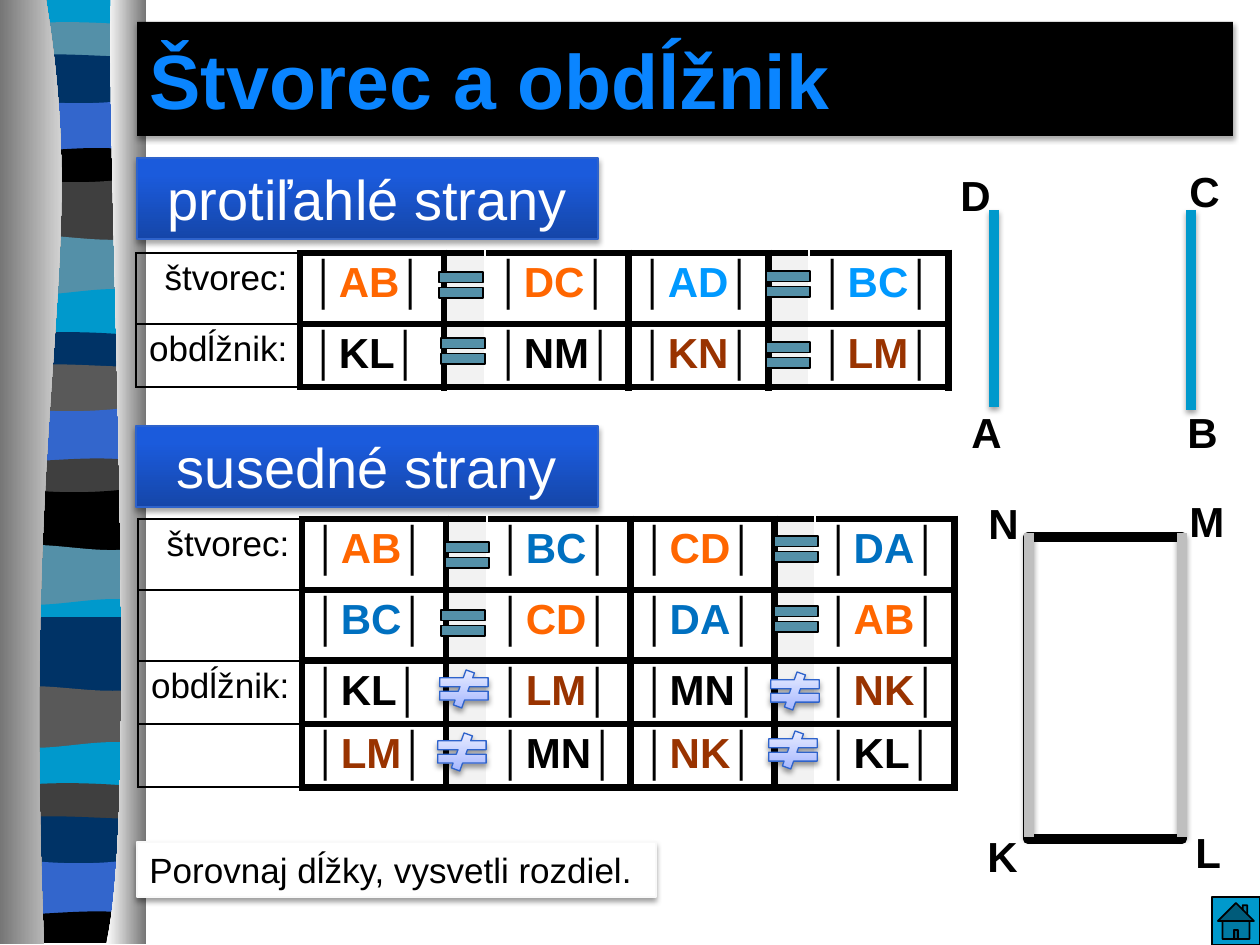
from lxml import etree
from pptx import Presentation, util as u
from pptx.dml.color import RGBColor
from pptx.enum import shapes, text
from pptx.oxml.ns import qn

SCALE = 914400 / 126
KIND = shapes.MSO_SHAPE
SIDE = text.PP_ALIGN
BLACK, WHITE, ORANGE, BROWN = "000000", "FFFFFF", "FF6600", "993300"
SKY, BLUE, TEAL, CYAN = "0099FF", "0070C0", "5490A8", "0099CC"
NAVY, ROYAL, DARK, GREY, PALE = "003366", "3366CC", "3F3F3F", "595959", "F2F2F2"
THICK, THIN = 4.5, 1


def px(*vals):
    """Turn px lengths into EMU."""
    return [round(v * SCALE) for v in vals]


def tint(code):
    """Make a colour from a hex string."""
    return RGBColor.from_string(code)


def put(item, form):
    """Set attributes of an object from a dict."""
    for name, val in form.items():
        setattr(item, name, val)


def write(para, runs, size, side=SIDE.LEFT):
    """Fill a paragraph with (text, colour, bold) runs."""
    para.alignment = side
    for words, code, bold in runs:
        run = para.add_run()
        run.text = words
        put(run.font, {"name": "Arial", "size": u.Pt(size), "bold": bold})
        run.font.color.rgb = tint(code)


def shade(item, alpha=0):
    """Replace the theme shadow by a soft one, or by none."""
    props = item._element.spPr
    for old in props.findall(qn("a:effectLst")):
        props.remove(old)
    effects = etree.SubElement(props, qn("a:effectLst"))
    if alpha:
        cast = etree.SubElement(effects, qn("a:outerShdw"), blurRad="39370",
                                dist="22860", dir="5400000", rotWithShape="0")
        color = etree.SubElement(cast, qn("a:srgbClr"), val=BLACK)
        etree.SubElement(color, qn("a:alpha"), val=str(alpha * 1000))


def paint(item, fill, line=None, width=1, alpha=0, angle=90):
    """Style a shape; a tuple of (position, colour) pairs is a gradient."""
    if isinstance(fill, str):
        item.fill.solid()
        item.fill.fore_color.rgb = tint(fill)
    else:
        item.fill.gradient()
        item.fill.gradient_angle = angle
        for stop, (place, code) in zip(item.fill.gradient_stops, fill):
            stop.position = place
            stop.color.rgb = tint(code)
    if line:
        item.line.color.rgb = tint(line)
        item.line.width = u.Pt(width)
    else:
        item.line.fill.background()
    shade(item, alpha)


def block(slide, kind, box, *style):
    """Add a styled preset shape."""
    item = slide.shapes.add_shape(kind, *px(*box))
    paint(item, *style)
    return item


def label(slide, words, left, top):
    """Add the letter of a corner."""
    frame = slide.shapes.add_textbox(*px(left, top, 46, 63)).text_frame
    frame.word_wrap = True
    write(frame.paragraphs[0], [(words, BLACK, True)], 24)


def rule(slide, left, top, end, code):
    """Add an upright side of a figure."""
    item = slide.shapes.add_connector(shapes.MSO_CONNECTOR.STRAIGHT, *px(left, top, left, end))
    item.line.color.rgb = tint(code)
    item.line.width = u.Pt(6)
    shade(item, 35)


def form(slide, points, fill):
    """Add a closed outline whose first four points make a curve."""
    pen = slide.shapes.build_freeform(*px(*points[0]), scale=1.0)
    pen.add_line_segments([px(*p) for p in points[1:]], close=True)
    item = pen.convert_to_shape()
    trace = next(item._element.iter(qn("a:path")))
    bend = etree.Element(qn("a:cubicBezTo"))
    for step in trace.findall(qn("a:lnTo"))[:3]:
        bend.append(step[0])
        trace.remove(step)
    trace.insert(1, bend)
    paint(item, fill, None, 1, 0, 0)


def pillar(slide):
    """Draw the wavy bands between two grey columns."""
    left, right, base = 6, 143, 943
    bands = [(0, 0, 0, CYAN), (26, -6, -4, TEAL), (57, -6, 0, NAVY), (98, 6, 8, ROYAL),
             (152, 0, -9, BLACK), (177, 7, 7, DARK), (237, -7, 9, TEAL), (292, 10, -10, CYAN),
             (336, -6, -4, NAVY), (367, -6, 0, GREY), (406, 8, 6, ROYAL), (462, 0, -8, DARK),
             (487, 7, 7, BLACK), (547, -8, 10, TEAL), (602, 10, -10, CYAN), (617, 0, 0, NAVY),
             (688, -7, 9, GREY), (745, 10, -10, CYAN), (787, -6, -4, DARK), (819, -6, 0, NAVY),
             (858, 6, 8, ROYAL), (915, 0, -8, BLACK)]
    ends = [band[0] + 12 for band in bands[1:]] + [base]
    for (top, dip, rise, code), end in zip(bands, ends):
        form(slide, [(left, top), (50, top + dip), (98, top + rise), (right, top),
                     (right, end), (left, end)], code)
    form(slide, [(46, 0), (91, 272), (21, 373), (44, 944), (0, 944), (0, 0)],
         ((0, "767676"), (1, WHITE)))
    form(slide, [(111, 0), (106, 158), (140, 814), (106, 944), (146, 944), (146, 0)],
         ((0, WHITE), (1, "767676")))


def border(cell, widths):
    """Draw the left, right, top and bottom edges that have a width."""
    props = cell._tc.get_or_add_tcPr()
    edges = [(side, width) for side, width in zip("LRTB", widths) if width]
    for spot, (side, width) in enumerate(edges):
        edge = etree.Element(qn("a:ln" + side), w=str(u.Pt(width)))
        fill = etree.SubElement(edge, qn("a:solidFill"))
        etree.SubElement(fill, qn("a:srgbClr"), val=BLACK)
        props.insert(spot, edge)


def grid(slide, left, top, cols, rows, names, pairs, hues):
    """Add a table that compares sides."""
    frame = slide.shapes.add_table(len(rows), len(cols), *px(left, top, sum(cols), sum(rows)))
    table = frame.table
    put(table, {"first_row": False, "horz_banding": False})
    for col, width in zip(table.columns, px(*cols)):
        col.width = width
    for row, height, name, sides in zip(table.rows, px(*rows), names, pairs):
        row.height = height
        words = dict(zip((1, 3, 4, 6), sides.split()))
        for spot, cell in enumerate(row.cells):
            cell.fill.background()
            para = cell.text_frame.paragraphs[0]
            if spot in words:
                side = words[spot]
                bar = ("│", BLACK, False)
                write(para, [bar, (side, hues.get(side, BLACK), True), bar], 24)
            elif spot:
                cell.fill.solid()
                cell.fill.fore_color.rgb = tint(PALE)
            elif name:
                write(para, [(name, BLACK, False)], 20, SIDE.RIGHT)
            border(cell, (THICK * (spot in (1, 4)), THICK * (spot in (3, 6)), THICK, THICK)
                   if spot else (THIN, THICK, THIN, THIN))


def panel(slide, words, box, size, side, code, *style):
    """Add a rectangle with one line of text."""
    item = block(slide, KIND.RECTANGLE, box, *style)
    item.text_frame.vertical_anchor = text.MSO_ANCHOR.MIDDLE
    write(item.text_frame.paragraphs[0], [(words, code, False)], size, side)


def head(slide, words):
    """Format the title and lay it over the pillar."""
    title = slide.shapes.title
    put(title, dict(zip(("left", "top", "width", "height"), px(137, 22, 1096, 114))))
    paint(title, BLACK, None, 1, 35)
    title.text_frame.vertical_anchor = text.MSO_ANCHOR.MIDDLE
    write(title.text_frame.paragraphs[0], [(words, "0A85FF", True)], 44)
    slide.shapes._spTree.append(title._element)


def main():
    """Build the slide."""
    deck = Presentation()
    put(deck, dict(zip(("slide_width", "slide_height"), px(1260, 945))))
    slide = deck.slides.add_slide(deck.slide_layouts[5])
    pillar(slide)
    head(slide, "Štvorec a obdĺžnik")
    block(slide, KIND.RECTANGLE, (1028, 537, 154, 302), WHITE, BLACK, 6)
    block(slide, KIND.ACTION_BUTTON_HOME, (1212, 897, 48, 48), CYAN, BLACK)
    deep = ((0, "1546A9"), (0.8, "1B5BDC"))
    for words, box in (("protiľahlé strany", (137, 158, 461, 81)),
                       ("susedné strany", (136, 426, 462, 81))):
        panel(slide, words, box, 32, SIDE.CENTER, WHITE, deep, "2E63CB", 0.75, 35)
    for words, left, top in (("A", 959, 400), ("B", 1175, 400), ("C", 1177, 159), ("D", 948, 163),
                             ("N", 976, 491), ("M", 1177, 489), ("K", 975, 824), ("L", 1183, 820)):
        label(slide, words, left, top)
    block(slide, KIND.RECTANGLE, (995, 212, 195, 195), WHITE, WHITE, 6)
    rule(slide, 994, 210, 407, CYAN)
    rule(slide, 1191, 210, 410, CYAN)
    brown = dict.fromkeys(("KN", "LM", "NK"), BROWN)
    grid(slide, 136, 253, (164, 144, 41, 144, 140, 40, 140), (71, 62), ("štvorec:", "obdĺžnik:"),
         ("AB DC AD BC", "KL NM KN LM"),
         {"AB": ORANGE, "DC": ORANGE, "AD": SKY, "BC": SKY, **brown})
    grid(slide, 138, 519, (164, 144, 41, 144, 144, 40, 140), (71, 71, 62, 62),
         ("štvorec:", "", "obdĺžnik:", ""),
         ("AB BC CD DA", "BC CD DA AB", "KL LM MN NK", "LM MN NK KL"),
         {"AB": ORANGE, "CD": ORANGE, "BC": BLUE, "DA": BLUE, **brown})
    for left in (1029, 1182):
        rule(slide, left, 533, 837, "BFBFBF")
    panel(slide, "Porovnaj dĺžky, vysvetli rozdiel.", (137, 842, 519, 55), 20, SIDE.LEFT,
          BLACK, WHITE, "F9F9F9", 0.75, 38)
    for left, top in ((431, 263), (758, 262), (433, 329), (758, 333),
                      (437, 533), (433, 601), (766, 527), (766, 597)):
        block(slide, KIND.MATH_EQUAL, (left, top, 60, 44), TEAL, BLACK)
    soft = ((0, "A7B8FF"), (1, "E7EBFF"))
    for left, top in ((431, 670), (429, 733), (762, 672), (760, 731)):
        block(slide, KIND.MATH_NOT_EQUAL, (left, top, 66, 38), soft, "2E63CB", 0.75, 38)
    deck.save("out.pptx")


if __name__ == "__main__":
    main()
